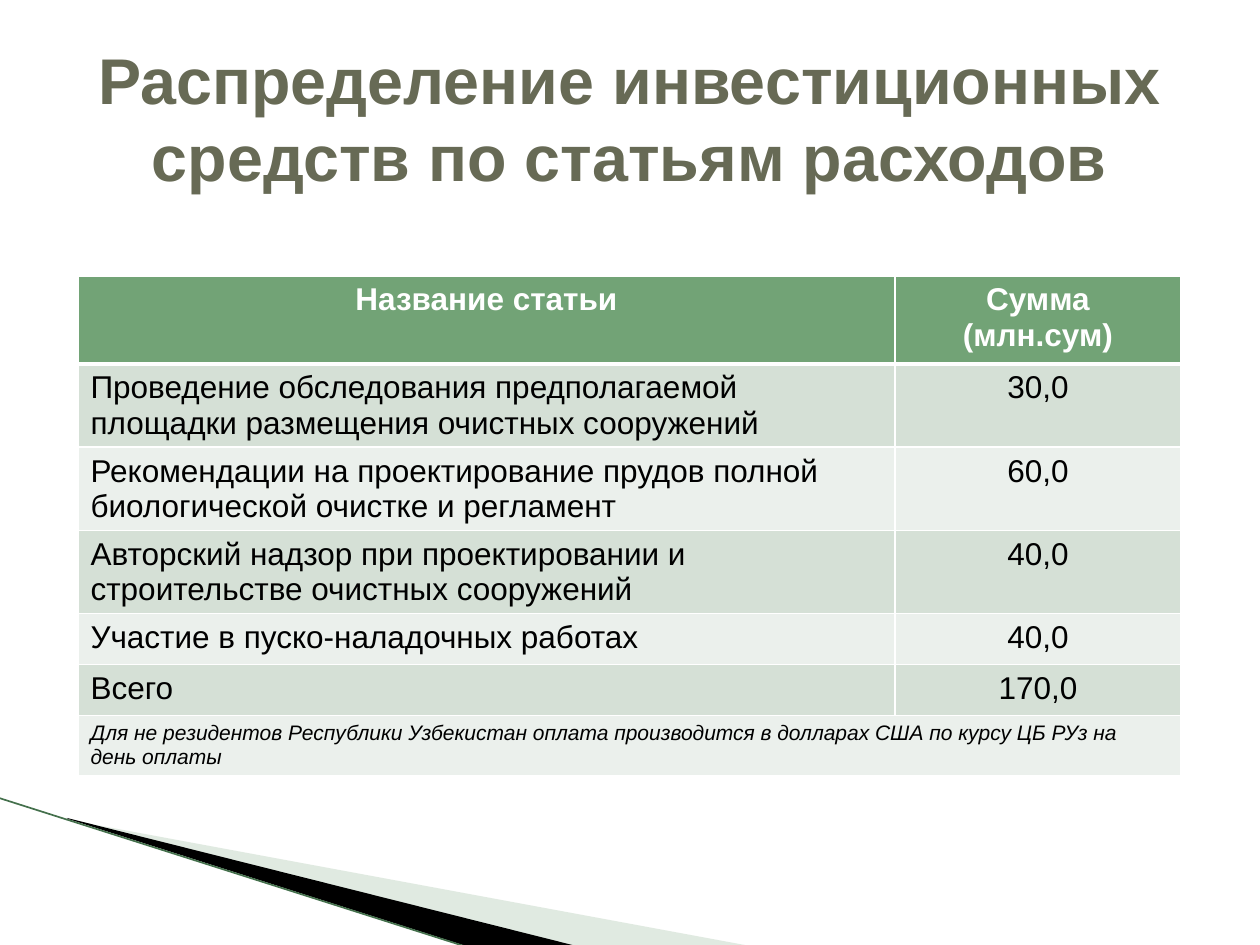
from lxml import etree
from pptx import Presentation
from pptx.dml.color import RGBColor
from pptx.enum.shapes import MSO_CONNECTOR
from pptx.enum.text import MSO_ANCHOR, PP_ALIGN
from pptx.oxml.ns import qn
from pptx.util import Pt

LINE = MSO_CONNECTOR.STRAIGHT
MID = MSO_ANCHOR.MIDDLE
LEFT, CENTER = PP_ALIGN.LEFT, PP_ALIGN.CENTER

SCALE = 914400 / 126
FONT = "Arial"
COLORS = {
    "title": "676A55", "head": "72A376", "dark": "D5E0D6", "light": "EBF0EC",
    "mist": "B3CBB5", "edge": "44704C", "black": "000000", "white": "FFFFFF",
}
ROWS = [
    ("Название статьи", "Сумма (млн.сум)"),
    ("Проведение обследования предполагаемой площадки размещения очистных сооружений", "30,0"),
    ("Рекомендации на проектирование прудов полной биологической очистке и регламент", "60,0"),
    ("Авторский надзор при проектировании и строительстве очистных сооружений", "40,0"),
    ("Участие в пуско-наладочных работах", "40,0"),
    ("Всего", "170,0"),
    ("Для не резидентов Республики Узбекистан оплата производится в долларах США "
     "по курсу ЦБ РУз на день оплаты", ""),
]
WIDTHS = [817, 286]
HEIGHTS = [88, 83, 83, 83, 51, 51, 60]


def emu(px):
    return round(px * SCALE)


def rgb(name):
    return RGBColor.from_string(COLORS[name])


class Deck:
    """Holds the style and the current slide."""

    def __init__(self, width, height):
        self.prs = Presentation()
        self.prs.slide_width, self.prs.slide_height = emu(width), emu(height)
        self.slide = self.prs.slides.add_slide(self.prs.slide_layouts[6])
        self.shapes = self.slide.shapes

    def style(self, para, size, color, align=LEFT, bold=False, italic=False):
        para.alignment = align
        for run in para.runs:
            font = run.font
            font.name, font.size = FONT, Pt(size)
            font.bold, font.italic = bold, italic
            font.color.rgb = rgb(color)

    def frame(self, shape, box):
        """Gives an outline a new frame and leaves its points in place."""
        left, top, width, height = map(emu, box)
        outline = shape._element.find(".//" + qn("a:path"))
        outline.set("w", str(width))
        outline.set("h", str(height))
        for point in outline.iter(qn("a:pt")):
            point.set("x", str(int(point.get("x")) + shape.left - left))
            point.set("y", str(int(point.get("y")) + shape.top - top))
        shape.left, shape.top = left, top
        shape.width, shape.height = width, height

    def wedge(self, box, points, color, alpha=100):
        """Draws a filled outline; alpha is its opacity in percent."""
        local = [(emu(x), emu(y)) for x, y in points]
        pen = self.shapes.build_freeform(*local[0])
        pen.add_line_segments(local[1:])
        shape = pen.convert_to_shape()
        self.frame(shape, box)
        shape.shadow.inherit = False
        shape.line.fill.background()
        shape.fill.solid()
        shape.fill.fore_color.rgb = rgb(color)
        if alpha < 100:
            tint = shape.fill._xPr.find(".//" + qn("a:srgbClr"))
            etree.SubElement(tint, qn("a:alpha"), val=str(alpha * 1000))

    def rule(self, start, end, color, width):
        line = self.shapes.add_connector(LINE, *map(emu, start + end))
        line.line.color.rgb = rgb(color)
        line.line.width = Pt(width)
        etree.SubElement(line._element.spPr, qn("a:effectLst"))

    def title(self, box, text, size):
        frame = self.shapes.add_textbox(*map(emu, box)).text_frame
        frame.word_wrap = True
        frame.vertical_anchor = MID
        frame.text = text
        self.style(frame.paragraphs[0], size, "title", CENTER, bold=True)

    def border(self, cell, top, bottom):
        """Adds white borders, 1 pt at the sides."""
        props = cell._tc.get_or_add_tcPr()
        sides = {"lnL": 1, "lnR": 1, "lnT": top, "lnB": bottom}
        for spot, (tag, width) in enumerate(sides.items()):
            line = etree.Element(qn("a:" + tag), w=str(Pt(width)))
            fill = etree.SubElement(line, qn("a:solidFill"))
            etree.SubElement(fill, qn("a:srgbClr"), val=COLORS["white"])
            props.insert(spot, line)

    def table(self, left, top, rows, widths, heights):
        """Draws a banded table with a head row and a note row across the foot."""
        box = map(emu, (left, top, sum(widths), sum(heights)))
        grid = self.shapes.add_table(len(rows), len(widths), *box).table
        for col, width in zip(grid.columns, widths):
            col.width = emu(width)
        for row, height in zip(grid.rows, heights):
            row.height = emu(height)
        last = len(rows) - 1
        grid.cell(last, 0).merge(grid.cell(last, len(widths) - 1))
        for r, texts in enumerate(rows):
            head, note = r == 0, r == last
            fill = "head" if head else ("light", "dark")[r % 2]
            for c, text in enumerate(texts):
                cell = grid.cell(r, c)
                cell.fill.solid()
                cell.fill.fore_color.rgb = rgb(fill)
                self.border(cell, 3 if r == 1 else 1, 3 if head else 1)
                if cell.is_spanned:
                    continue
                cell.text_frame.text = text
                self.style(cell.text_frame.paragraphs[0], 12 if note else 18,
                           "white" if head else "black",
                           CENTER if head or c else LEFT, head, note)


def main():
    deck = Deck(1260, 945)
    deck.wedge((98, 689, 524, 199),
               [(69, 820), (750, 946), (575, 946), (69, 819)], "mist", 40)
    deck.wedge((-8, 798, 524, 116),
               [(67, 818), (576, 946), (469, 947), (68, 819)], "black")
    deck.rule((-1, 798), (467, 947), "edge", 0.95)
    deck.table(78, 276, ROWS, WIDTHS, HEIGHTS)
    deck.title((63, 38, 1134, 158),
               "Распределение инвестиционных средств по статьям расходов", 36.9)
    deck.prs.save("out.pptx")


if __name__ == "__main__":
    main()
